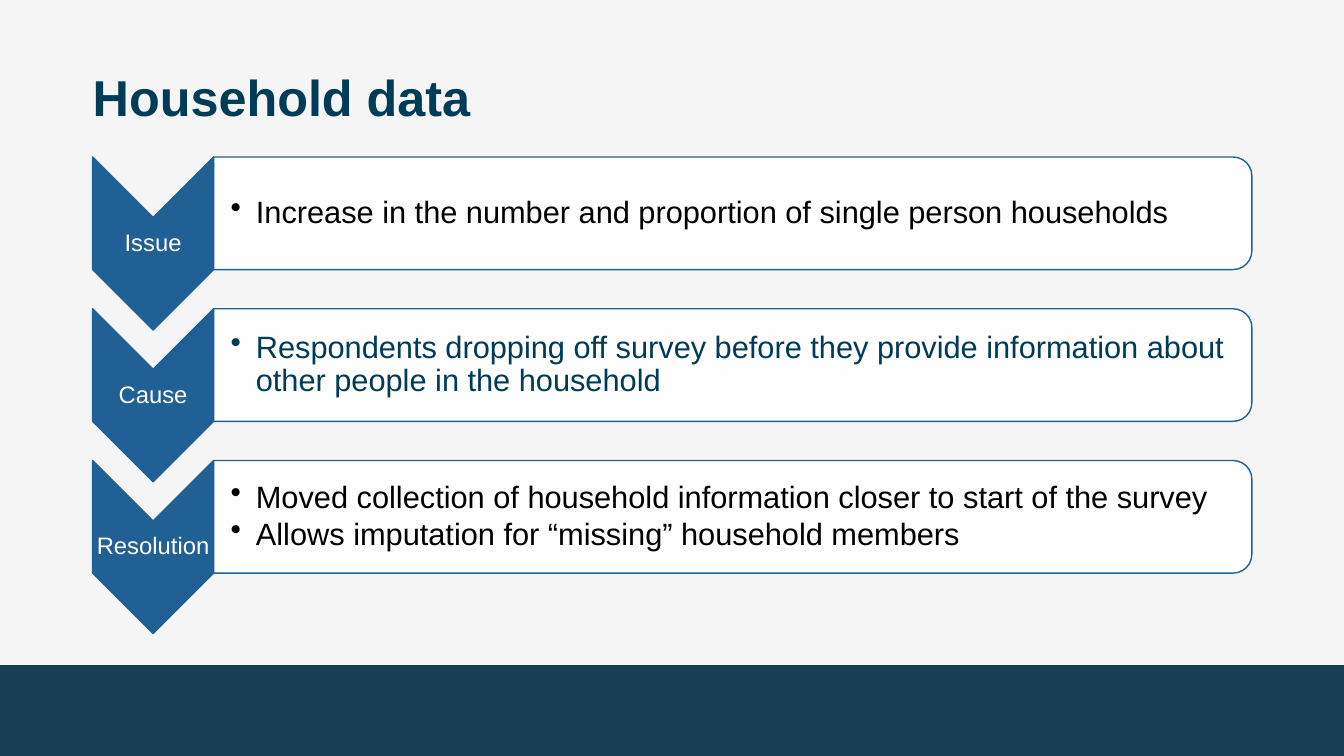
from pptx import Presentation
from pptx.dml.color import RGBColor as RGB
from pptx.enum.shapes import MSO_SHAPE as Kind
from pptx.enum.text import MSO_ANCHOR as Anchor, PP_ALIGN as Align
from pptx.oxml.ns import qn
from pptx.util import Pt
from lxml.etree import SubElement as Sub

TITLE = "Household data"
STEPS = [
    ("Issue", "black", ["Increase in the number and proportion of single person households"]),
    ("Cause", "ink", ["Respondents dropping off survey before they provide information about "
                      "other people in the household"]),
    ("Resolution", "black", ["Moved collection of household information closer to start of the survey",
                             "Allows imputation for “missing” household members"]),
]
THEME = {
    "font": "Arial",
    "color": {"back": "F5F5F6", "foot": "183E56", "head": "003C57", "blue": "206095",
              "white": "FFFFFF", "black": "000000", "ink": "003B57"},
    "size": {"title": 36, "label": 17, "body": 22},
}
WIDE, HIGH = 960, 540
LEFT, TOP, PITCH = 66.2, 112.2, 108.4
ARROW_W, ARROW_H = 86.4, 123.6
BAR_W, BAR_H = 741.6, 80.4
LABEL_H, BODY_H = 37.4, 72.8
FOOT_H = 64.8


def tint(name):
    return RGB.from_string(THEME["color"][name])


def apply(obj, vals):
    for key, val in vals.items():
        setattr(obj, key, val)


def shape(kind, box, fill, edge=None, turn=0):
    x, y, w, h = box
    if turn:
        x, y, w, h = x + (w - h) / 2, y + (h - w) / 2, h, w
    item = slide.shapes.add_shape(kind, Pt(x), Pt(y), Pt(w), Pt(h))
    item.shadow.inherit = False
    item.rotation = turn
    item.fill.solid()
    item.fill.fore_color.rgb = tint(fill)
    if edge:
        item.line.color.rgb = tint(edge)
        item.line.width = Pt(1)
    else:
        item.line.fill.background()
    return item


def text(lines, box, role, color, pad, para, bold=False, bullet=False, anchor=Anchor.MIDDLE):
    frame = slide.shapes.add_textbox(*map(Pt, box)).text_frame
    left, rest = map(Pt, pad)
    apply(frame, {"word_wrap": True, "vertical_anchor": anchor, "margin_left": left,
                  "margin_right": rest, "margin_top": rest, "margin_bottom": rest})
    for i, line in enumerate(lines):
        par = frame.add_paragraph() if i else frame.paragraphs[0]
        if bullet:
            props = par._p.get_or_add_pPr()
            props.set("marL", str(Pt(18)))
            props.set("indent", str(-Pt(18)))
            Sub(props, qn("a:buChar")).set("char", "•")
        apply(par, para)
        run = par.add_run()
        run.text = line
        apply(run.font, {"name": THEME["font"], "size": Pt(THEME["size"][role]), "bold": bold})
        run.font.color.rgb = tint(color)


deck = Presentation()
apply(deck, {"slide_width": Pt(WIDE), "slide_height": Pt(HIGH)})
slide = deck.slides.add_slide(deck.slide_layouts[6])
slide.background.fill.solid()
slide.background.fill.fore_color.rgb = tint("back")

shape(Kind.RECTANGLE, (0, HIGH - FOOT_H, WIDE, FOOT_H), "foot")
text([TITLE], (LEFT, 50.4, 828, 41.8), "title", "head", (0, 0),
     {"line_spacing": 0.95}, bold=True, anchor=Anchor.TOP)

for i, (label, color, lines) in enumerate(STEPS):
    top = TOP + i * PITCH
    mid = LEFT + ARROW_W
    shape(Kind.CHEVRON, (LEFT, top, ARROW_W, ARROW_H), "blue", "blue", 90)
    text([label], (LEFT, top + (ARROW_H - LABEL_H) / 2, ARROW_W, LABEL_H), "label", "white",
         (0.8, 0.8), {"alignment": Align.CENTER, "line_spacing": 0.9})
    bar = shape(Kind.ROUND_2_SAME_RECTANGLE, (mid, top, BAR_W, BAR_H), "white", "blue", 90)
    paint = bar._element.spPr.find(qn("a:solidFill"))
    Sub(paint[0], qn("a:alpha")).set("val", "90000")
    text(lines, (mid, top + (BAR_H - BODY_H) / 2, BAR_W - 4, BODY_H), "body", color,
         (12.2, 1.4), {"line_spacing": 0.9, "space_after": Pt(3)}, bullet=True)

deck.save("out.pptx")
